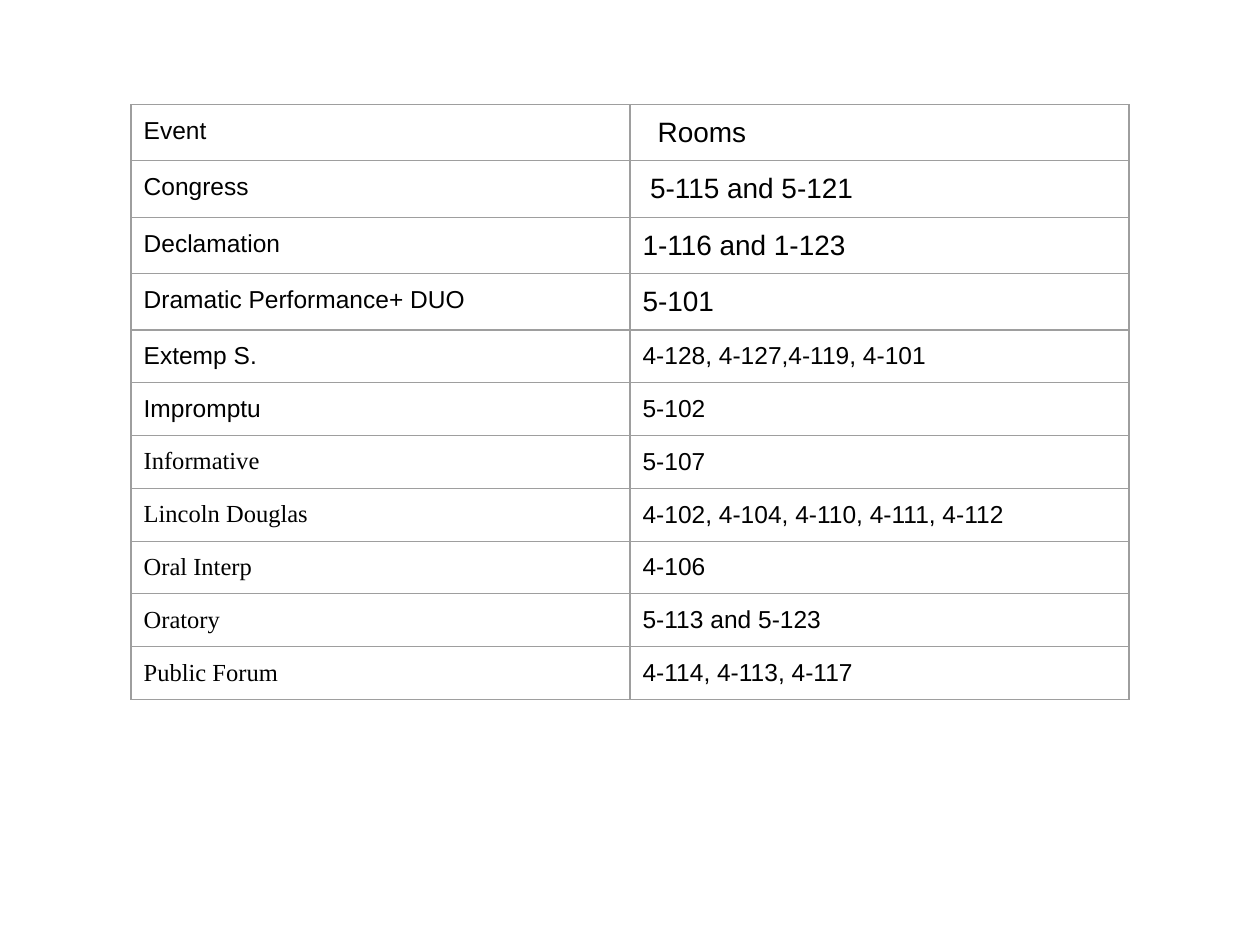
from lxml.etree import SubElement
from pptx import Presentation
from pptx.dml.color import RGBColor as RGB
from pptx.oxml.ns import qn
from pptx.util import Inches, Pt

ROWS = [
    ("Event", "Rooms"),
    ("Congress", "5-115 and 5-121"),
    ("Declamation", "1-116 and 1-123"),
    ("Dramatic Performance+ DUO", "5-101"),
    ("Extemp S.", "4-128, 4-127,4-119, 4-101"),
    ("Impromptu", "5-102"),
    ("Informative", "5-107"),
    ("Lincoln Douglas", "4-102, 4-104, 4-110, 4-111, 4-112"),
    ("Oral Interp", "4-106"),
    ("Oratory", "5-113 and 5-123"),
    ("Public Forum", "4-114, 4-113, 4-117"),
]
LARGE_ROWS = 4
SERIF_FROM = 6
ROOM_INDENTS = {0: 0.12, 1: 0.06}
THEME = {
    "sans": "Arial", "serif": "Times New Roman",
    "body": 14, "large": 16,
    "text": "000000", "border": "9E9E9E", "border_width": 0.75,
}
LEFT, TOP, COL_WIDTH, PADDING = 1.04, 0.83, 3.96, 0.1
LARGE_HEIGHT, BODY_HEIGHT = 0.44, 0.41


def add_borders(cell):
    """Draw a thin line on every side of a cell."""
    props = cell._tc.get_or_add_tcPr()
    for side in ("lnL", "lnR", "lnT", "lnB"):
        line = SubElement(props, qn(f"a:{side}"), w=str(Pt(THEME["border_width"])))
        fill = SubElement(line, qn("a:solidFill"))
        SubElement(fill, qn("a:srgbClr"), val=THEME["border"])


def fill_cell(cell, text, font, size, indent):
    """Write one styled cell."""
    add_borders(cell)
    cell.fill.background()
    cell.margin_left = Inches(PADDING + indent)
    cell.margin_right = cell.margin_top = cell.margin_bottom = Inches(PADDING)
    r = cell.text_frame.paragraphs[0].add_run()
    r.text = text
    r.font.name = font
    r.font.size = Pt(size)
    r.font.color.rgb = RGB.from_string(THEME["text"])


def main():
    """Build the room schedule slide."""
    prs = Presentation()
    prs.slide_width, prs.slide_height = Inches(10), Inches(7.5)
    s = prs.slides.add_slide(prs.slide_layouts[6])
    heights = [LARGE_HEIGHT if i < LARGE_ROWS else BODY_HEIGHT for i in range(len(ROWS))]
    table = s.shapes.add_table(
        len(ROWS), 2, Inches(LEFT), Inches(TOP), Inches(2 * COL_WIDTH), Inches(sum(heights))
    ).table
    table.first_row = table.horz_banding = False
    for col in table.columns:
        col.width = Inches(COL_WIDTH)
    for i, (event, rooms) in enumerate(ROWS):
        table.rows[i].height = Inches(heights[i])
        event_font = THEME["serif" if i >= SERIF_FROM else "sans"]
        room_size = THEME["large" if i < LARGE_ROWS else "body"]
        fill_cell(table.cell(i, 0), event, event_font, THEME["body"], 0)
        fill_cell(table.cell(i, 1), rooms, THEME["sans"], room_size, ROOM_INDENTS.get(i, 0))
    prs.save("out.pptx")


if __name__ == "__main__":
    main()
